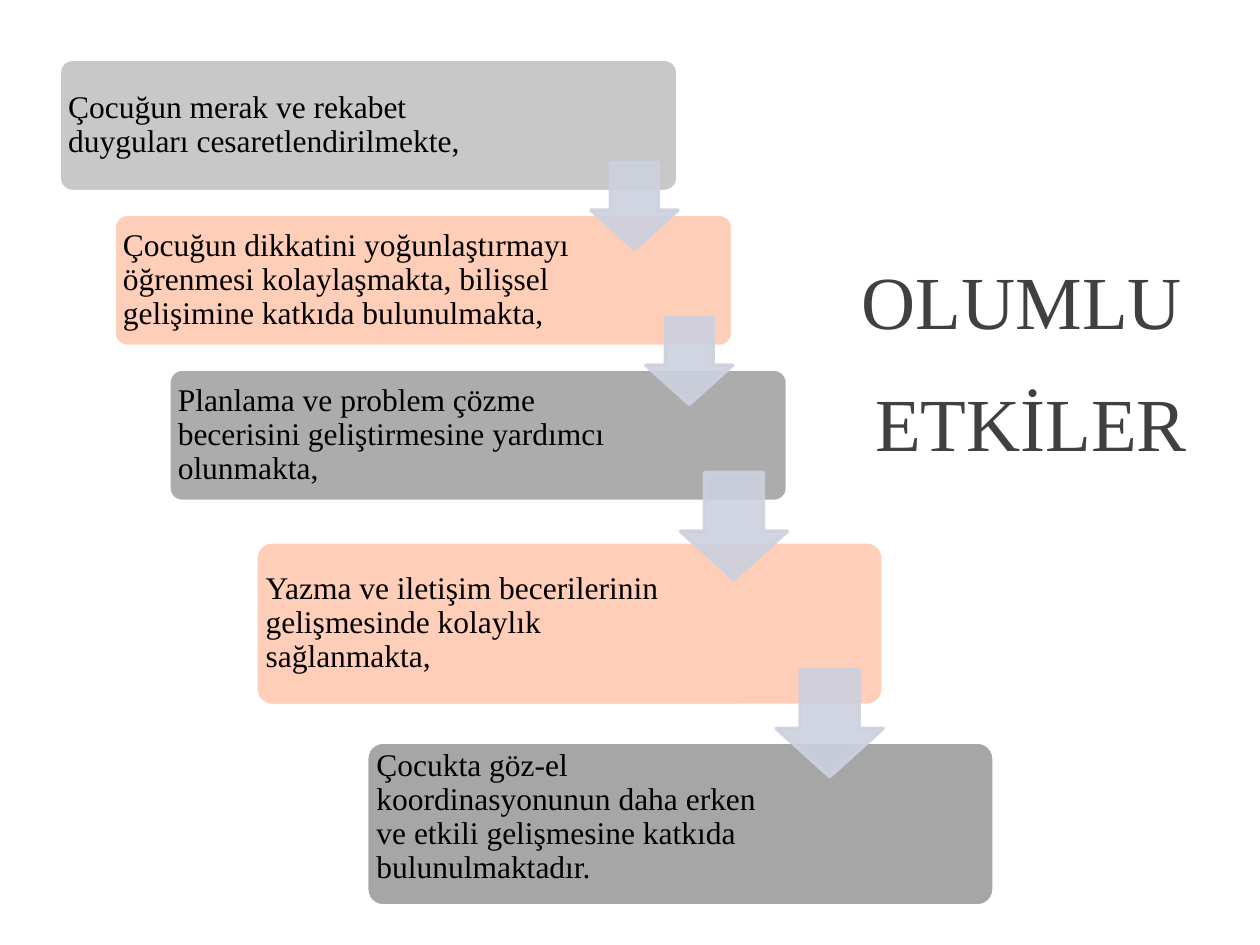
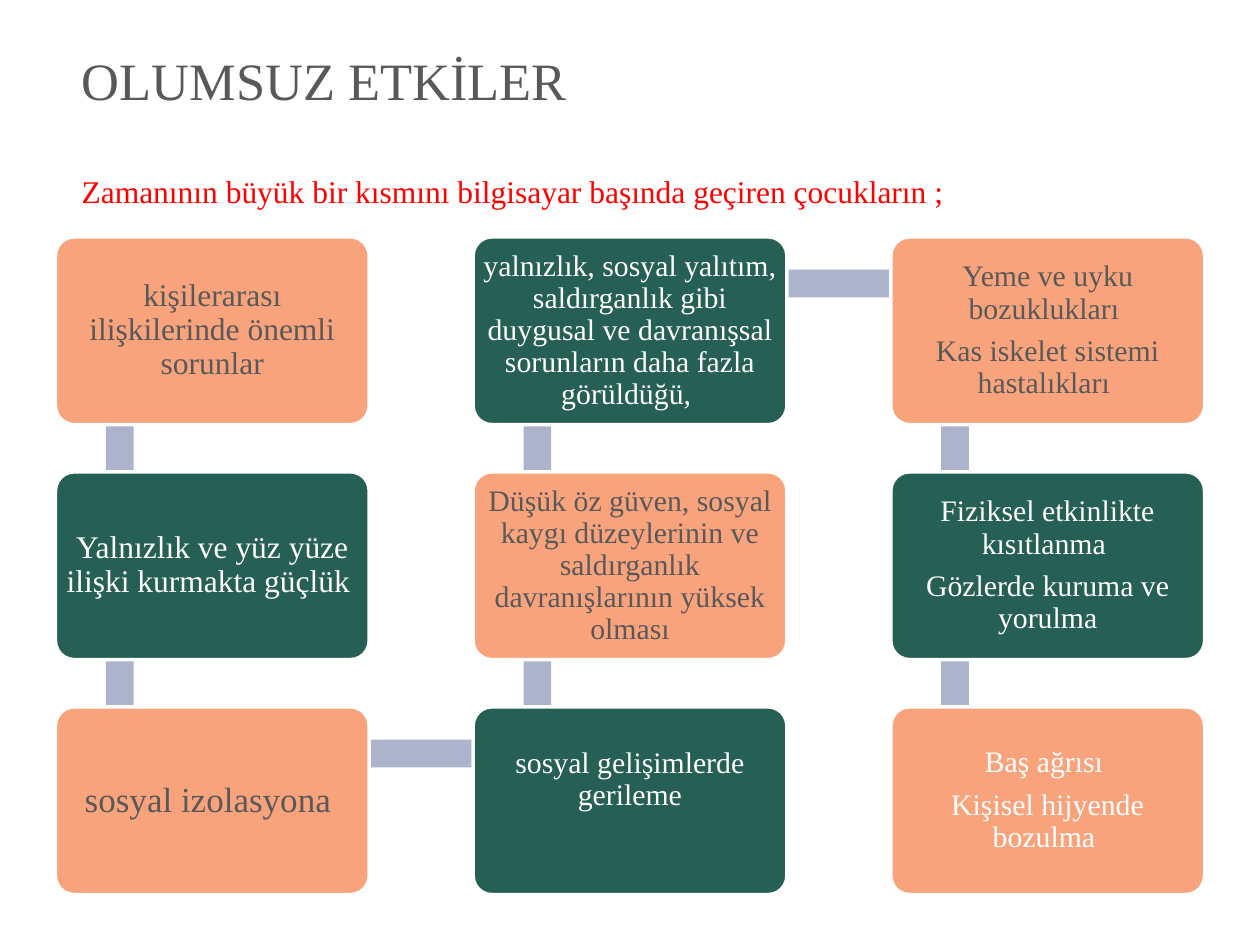
from collections import namedtuple
from dataclasses import dataclass

from lxml import etree
from pptx import Presentation
from pptx.dml.color import RGBColor
from pptx.enum.shapes import MSO_SHAPE
from pptx.enum.text import MSO_ANCHOR, PP_ALIGN
from pptx.oxml.ns import qn
from pptx.util import Inches, Pt

ROUND, ARROW, RECT = MSO_SHAPE.ROUNDED_RECTANGLE, MSO_SHAPE.DOWN_ARROW, MSO_SHAPE.RECTANGLE
LEFT, CENTER = PP_ALIGN.LEFT, PP_ALIGN.CENTER
TOP, MIDDLE = MSO_ANCHOR.TOP, MSO_ANCHOR.MIDDLE

SLIDE_W, SLIDE_H = 10, 7.5
COLS = 100                      # the slide is a grid of 100 columns by 75 rows
UNIT = Inches(SLIDE_W / COLS)

Box = namedtuple("Box", "x y w h")
Step = namedtuple("Step", "box text_w fill text lift arrow")
Card = namedtuple("Card", "col row size paragraphs fill color lift")


@dataclass(frozen=True)
class Theme:
    font: str = "Times New Roman"
    white: str = "FFFFFF"
    black: str = "000000"
    dark: str = "404040"
    grey: str = "595959"
    red: str = "FF0000"
    silver: str = "C8C8C8"
    steel: str = "ACACAC"
    ash: str = "A6A6A6"
    peach: str = "FFCEB8"
    orange: str = "F8A37C"
    green: str = "265F53"
    arrow: str = "CCD1DE"
    link: str = "ABB4CB"
    hero: float = 42.8
    title: int = 30
    body: int = 18
    large: int = 20
    small: int = 17
    edge: int = 2
    tight: float = 0.9
    gap: int = 6


T = Theme()


def rgb(color):
    return RGBColor.from_string(color)


def emu(box):
    return [round(v * UNIT) for v in box]


def add_block(s, kind, box, fill, line=None, adjustments=()):
    sp = s.shapes.add_shape(kind, *emu(box))
    sp.shadow.inherit = False
    for i, value in enumerate(adjustments):
        sp.adjustments[i] = value
    sp.fill.solid()
    sp.fill.fore_color.rgb = rgb(fill)
    if line:
        sp.line.color.rgb = rgb(line)
        sp.line.width = Pt(T.edge)
    else:
        sp.line.fill.background()
    return sp


def set_frame(sp, anchor, insets):
    """Insets are left, top, right, bottom in grid units."""
    tf = sp.text_frame
    tf.word_wrap = True
    tf.vertical_anchor = anchor
    tf.margin_left, tf.margin_top, tf.margin_right, tf.margin_bottom = emu(insets)
    return tf


def write(tf, paragraphs, align, spacing, gap):
    """Paragraphs are (text, size, color); gap is the space before all but the first."""
    tf.text = "\n".join(text for text, _, _ in paragraphs)
    for i, (p, (_, size, color)) in enumerate(zip(tf.paragraphs, paragraphs)):
        p.alignment = align
        p.line_spacing = spacing
        if i:
            p.space_before = Pt(gap)
        for r in p.runs:
            r.font.name = T.font
            r.font.size = Pt(size)
            r.font.color.rgb = rgb(color)


def set_alpha(sp, percent):
    for clr in sp.element.spPr.iter(qn("a:srgbClr")):
        etree.SubElement(clr, qn("a:alpha")).set("val", str(percent * 1000))


def add_heading(s, box, insets, paragraphs, align, spacing, gap):
    tf = set_frame(s.shapes.add_textbox(*emu(box)), TOP, insets)
    write(tf, paragraphs, align, spacing, gap)
    return tf


def add_step(s, step):
    box = step.box
    sp = add_block(s, ROUND, box, step.fill, T.white, [0.1])
    tf = set_frame(sp, MIDDLE, (0.4, 0.4, box.w - step.text_w + 0.4, 0.4 + step.lift))
    write(tf, [(step.text, T.body, T.black)], LEFT, T.tight, T.gap)


def add_step_arrow(s, box, size):
    """Arrow flush with the right edge of its step, dropping to the next one."""
    place = Box(box.x + box.w - size, box.y + 0.78 * box.h, size, size)
    set_alpha(add_block(s, ARROW, place, T.arrow, T.arrow, [0.55, 0.45]), 90)


def add_staircase(s, steps):
    for step in steps:
        add_step(s, step)
    for step in steps:
        if step.arrow:
            add_step_arrow(s, step.box, step.arrow)


def add_snake(s, box, cards, card_w, card_h):
    """Cards in three columns, linked in reading order by bars behind them."""
    step_x, step_y = (box.w - card_w) / 2, (box.h - card_h) / 2
    bar, anchor_x, anchor_y = 2.2, 5.1, 3.7

    def corner(card):
        return box.x + card.col * step_x, box.y + card.row * step_y

    for a, b in zip(cards, cards[1:]):
        (ax, ay), (bx, by) = corner(a), corner(b)
        x, y = min(ax, bx) + anchor_x, min(ay, by) + anchor_y
        if a.col == b.col:
            place = Box(x - bar / 2, y, bar, step_y)
        else:
            place = Box(x, y - bar / 2, step_x, bar)
        add_block(s, RECT, place, T.link)
    for card in cards:
        sp = add_block(s, ROUND, Box(*corner(card), card_w, card_h),
                       card.fill, T.white, [0.1])
        tf = set_frame(sp, MIDDLE, (0.3, 0.3, 0.3, 0.3 + card.lift))
        write(tf, [(text, card.size, card.color) for text in card.paragraphs],
              CENTER, T.tight, T.gap)


def positive_slide(s):
    tf = add_heading(s, Box(62.5, 11.7, 37.5, 27.3), (1, 6.4, 1, 1),
                     [("OLUMLU ", T.hero, T.dark), ("ETKİLER", T.hero, T.dark)],
                     CENTER, 1.3, 3)
    for p in tf.paragraphs:
        pPr = p._p.get_or_add_pPr()
        pPr.set("marL", str(Inches(0.5)))
        pPr.set("indent", str(Inches(-0.38)))

    upper = [Box(4.7 + 4.35 * i, 4.7 + 12.3 * i, 49.1, 10.5) for i in range(3)]
    lower = [Box(20.3 + 8.8 * i, 43 + 15.9 * i, 49.8, 13) for i in range(2)]
    add_staircase(s, [
        Step(upper[0], 38.4, T.silver,
             "Çocuğun merak ve rekabet duyguları cesaretlendirilmekte,", 0, 6.9),
        Step(upper[1], 37.9, T.peach,
             "Çocuğun dikkatini yoğunlaştırmayı öğrenmesi kolaylaşmakta, "
             "bilişsel gelişimine katkıda bulunulmakta,", 0, 6.9),
        Step(upper[2], 37.9, T.steel,
             "Planlama ve problem çözme becerisini geliştirmesine yardımcı "
             "olunmakta,", 0, 8.5),
        Step(lower[0], 37.1, T.peach,
             "Yazma ve iletişim becerilerinin gelişmesinde kolaylık sağlanmakta,",
             0, 8.5),
        Step(lower[1], 32.6, T.ash,
             "Çocukta göz-el koordinasyonunun daha erken ve etkili gelişmesine "
             "katkıda bulunulmaktadır.", 1, None),
    ])


def negative_slide(s):
    add_heading(s, Box(5.5, 2.3, 92.6, 13.5), (1, 1.5, 1, 0),
                [("OLUMSUZ ETKİLER", T.title, T.grey),
                 ("Zamanının büyük bir kısmını bilgisayar başında geçiren çocukların ;",
                  T.body, T.red)],
                LEFT, 1.0, 35)
    add_snake(s, Box(4.4, 18.8, 91.2, 52.2), [
        Card(0, 0, T.body, ["kişilerarası ilişkilerinde önemli sorunlar"],
             T.orange, T.grey, 0),
        Card(0, 1, T.body, ["Yalnızlık ve yüz yüze ilişki kurmakta güçlük "],
             T.green, T.white, 0),
        Card(0, 2, T.large, ["sosyal izolasyona "], T.orange, T.grey, 0),
        Card(1, 2, T.small, ["sosyal gelişimlerde gerileme"], T.green, T.white, 3.3),
        Card(1, 1, T.small, ["Düşük öz güven, sosyal kaygı düzeylerinin ve "
                             "saldırganlık davranışlarının yüksek olması"],
             T.orange, T.grey, 0),
        Card(1, 0, T.small, ["yalnızlık, sosyal yalıtım, saldırganlık gibi duygusal ve "
                             "davranışsal sorunların daha fazla görüldüğü, "],
             T.green, T.white, 0),
        Card(2, 0, T.small, ["Yeme ve uyku bozuklukları ",
                             "Kas iskelet sistemi hastalıkları "],
             T.orange, T.grey, 0),
        Card(2, 1, T.small, ["Fiziksel etkinlikte kısıtlanma ",
                             "Gözlerde kuruma ve yorulma"],
             T.green, T.white, 0),
        Card(2, 2, T.small, ["Baş ağrısı ", "Kişisel hijyende bozulma "],
             T.orange, T.white, 0),
    ], 24.9, 14.9)


def main():
    prs = Presentation()
    prs.slide_width, prs.slide_height = Inches(SLIDE_W), Inches(SLIDE_H)
    blank = prs.slide_layouts[6]
    for build in (positive_slide, negative_slide):
        build(prs.slides.add_slide(blank))
    prs.save("out.pptx")


if __name__ == "__main__":
    main()
